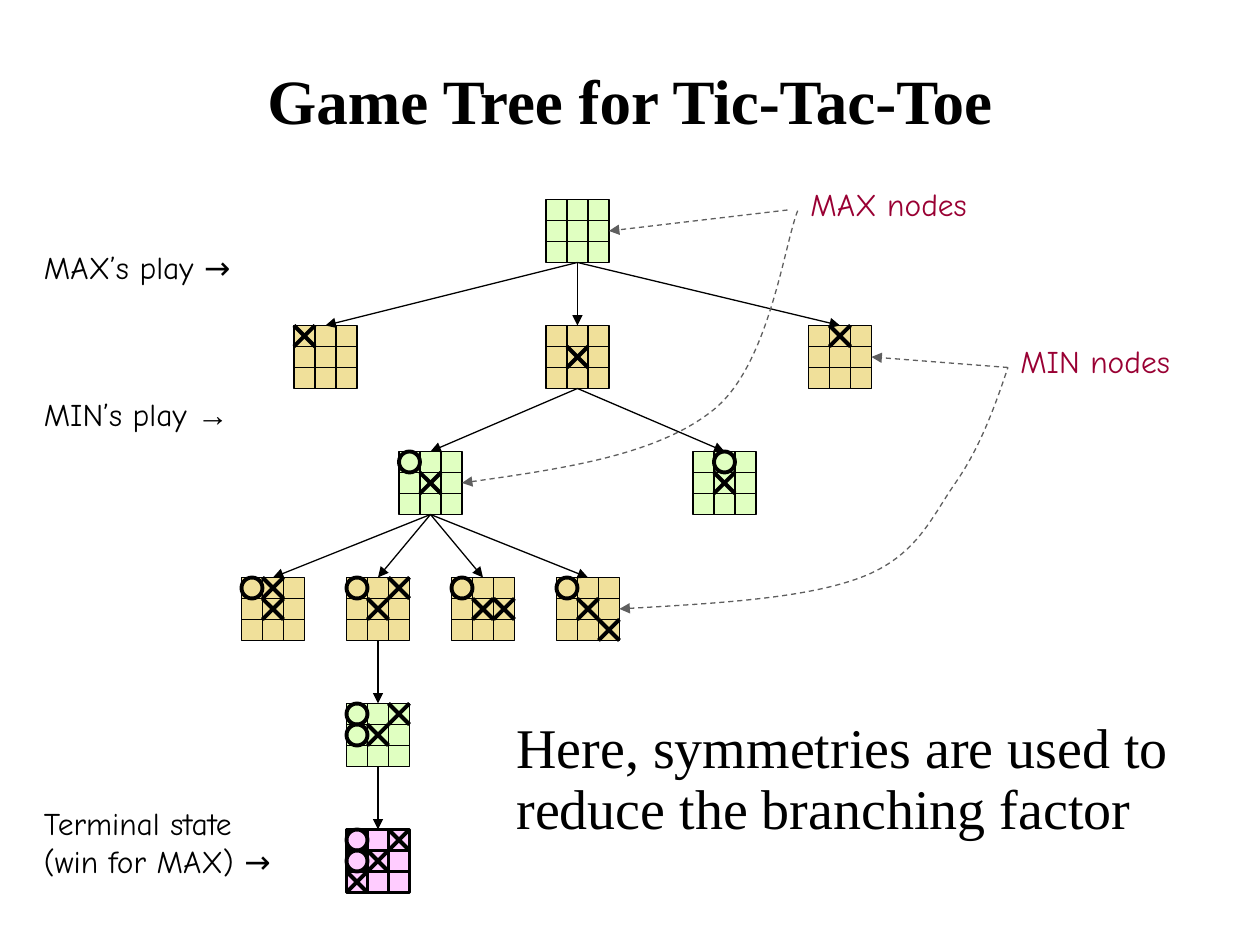
from lxml.etree import SubElement
from pptx import Presentation
from pptx.dml.color import RGBColor
from pptx.enum.dml import MSO_LINE
from pptx.enum.shapes import MSO_CONNECTOR, MSO_SHAPE
from pptx.enum.text import MSO_ANCHOR, MSO_AUTO_SIZE, PP_ALIGN
from pptx.oxml.ns import qn
from pptx.util import Inches, Pt

COLOURS = {
    "ink": "000000",
    "note": "990033",
    "pointer": "5F5F5F",
    "max": "E0FFC1",
    "min": "F0E09A",
    "terminal": "FFCCFF",
}
SLIDE_COLUMNS, SLIDE_ROWS = 120, 90
CELL = 2
BOARD = 3 * CELL
FIRST_ROW, LEVEL_ROWS = 19, 12
TOP, BOTTOM, RIGHT = 0, 2, 3

# name: (column, level, player, marks row by row)
BOARDS = {
    "root": (52, 0, "max", "... ... ..."),
    "corner": (28, 1, "min", "X.. ... ..."),
    "centre": (52, 1, "min", "... .X. ..."),
    "edge": (77, 1, "min", ".X. ... ..."),
    "corner reply": (38, 2, "max", "O.. .X. ..."),
    "edge reply": (66, 2, "max", ".O. .X. ..."),
    "top middle": (23, 3, "min", "OX. .X. ..."),
    "top right": (33, 3, "min", "O.X .X. ..."),
    "middle right": (43, 3, "min", "O.. .XX ..."),
    "bottom right": (53, 3, "min", "O.. .X. ..X"),
    "block": (33, 4, "max", "O.X OX. ..."),
    "win": (33, 5, "terminal", "O.X OX. X.."),
}
MOVES = {
    "root": ("corner", "centre", "edge"),
    "centre": ("corner reply", "edge reply"),
    "corner reply": ("top middle", "top right", "middle right", "bottom right"),
    "top right": ("block",),
    "block": ("win",),
}


def grid(*units):
    """Turn grid units into slide lengths."""
    return [Inches(unit / 12) for unit in units]


def colour(name):
    """Look up a named colour."""
    return RGBColor.from_string(COLOURS[name])


def format_line(shape, width=0.75, ink="ink", dashed=False, arrow=None):
    """Format an outline or connector and take its shadow away."""
    shape.line.color.rgb = colour(ink)
    shape.line.width = Pt(width)
    if dashed:
        shape.line.dash_style = MSO_LINE.DASH
    properties = shape._element.spPr
    if arrow:
        SubElement(properties.find(qn("a:ln")), qn(f"a:{arrow}"), type="triangle")
    if properties.find(qn("a:effectLst")) is None:
        SubElement(properties, qn("a:effectLst"))


def add_line(shapes, start, end, **line_format):
    """Add a straight connector between two grid points."""
    connector = shapes.add_connector(MSO_CONNECTOR.STRAIGHT, *grid(*start, *end))
    format_line(connector, **line_format)
    return connector


def add_filled(shapes, kind, box, fill, width):
    """Add an outlined preset shape."""
    shape = shapes.add_shape(kind, *grid(*box))
    shape.fill.solid()
    shape.fill.fore_color.rgb = colour(fill)
    format_line(shape, width)
    return shape


def write_text(frame, text, font="Comic Neue", size=18, ink="ink", bold=False,
               align=PP_ALIGN.LEFT, spacing=None, tail="", tail_font="Arial"):
    """Write one paragraph, with an optional tail in another font."""
    paragraph = frame.paragraphs[0]
    paragraph.text = text
    paragraph.alignment = align
    if spacing:
        paragraph.line_spacing = spacing
    if tail:
        paragraph.add_run().text = tail
    for run in paragraph.runs:
        run.font.name = tail_font if run.text == tail else font
        run.font.size = Pt(size)
        run.font.bold = bold
        run.font.color.rgb = colour(ink)


def add_text(slide, box, text, wrap=False, **text_format):
    """Add a text box on the grid."""
    frame = slide.shapes.add_textbox(*grid(*box)).text_frame
    frame.word_wrap = wrap
    frame.auto_size = MSO_AUTO_SIZE.SHAPE_TO_FIT_TEXT
    write_text(frame, text, **text_format)


def add_title(slide, box, text):
    """Place and write the slide title."""
    title = slide.shapes.title
    title.left, title.top, title.width, title.height = grid(*box)
    title.text_frame.vertical_anchor = MSO_ANCHOR.MIDDLE
    write_text(title.text_frame, text, font="Times New Roman", size=36, bold=True,
               align=PP_ALIGN.CENTER)


def add_board(slide, left, top, player, marks):
    """Draw one board with its marks and return its square."""
    shapes = slide.shapes.add_group_shape().shapes
    width = 1.5 if player == "terminal" else 0.75
    right, bottom = left + BOARD, top + BOARD
    square = add_filled(shapes, MSO_SHAPE.RECTANGLE, (left, top, BOARD, BOARD),
                        player, width)
    for offset in (CELL, 2 * CELL):
        add_line(shapes, (left, top + offset), (right, top + offset), width=width)
        add_line(shapes, (left + offset, top), (left + offset, bottom), width=width)
    for row, line in enumerate(marks.split()):
        for column, mark in enumerate(line):
            x, y = left + column * CELL, top + row * CELL
            if mark == "O":
                add_filled(shapes, MSO_SHAPE.OVAL, (x, y, CELL, CELL), player, 2.25)
            elif mark == "X":
                add_line(shapes, (x, y), (x + CELL, y + CELL), width=2.25)
                add_line(shapes, (x, y + CELL), (x + CELL, y), width=2.25)
    return square


def add_tree(slide):
    """Draw all boards and the moves that join them."""
    squares = {
        name: add_board(slide, column, FIRST_ROW + level * LEVEL_ROWS, player, marks)
        for name, (column, level, player, marks) in BOARDS.items()
    }
    for parent, children in MOVES.items():
        for child in children:
            move = add_line(slide.shapes, (0, 0), (1, 1), arrow="tailEnd")
            move.begin_connect(squares[parent], BOTTOM)
            move.end_connect(squares[child], TOP)
    return squares


def add_curve(slide, points):
    """Draw a dashed Bezier curve with an arrowhead at its start."""
    start, *others = [grid(*point) for point in points]
    builder = slide.shapes.build_freeform(*start)
    builder.add_line_segments(others, close=False)
    curve = builder.convert_to_shape()
    curve.fill.background()
    format_line(curve, ink="pointer", dashed=True, arrow="headEnd")
    segments = list(curve._element.iter(qn("a:lnTo")))
    outline = segments[0].getparent()
    for first in range(0, len(segments), 3):
        bezier = SubElement(outline, qn("a:cubicBezTo"))
        for segment in segments[first:first + 3]:
            bezier.append(segment[0])
            outline.remove(segment)


def add_note(slide, box, text, start, square, curve):
    """Name a kind of node and point at two examples."""
    add_text(slide, box, text, ink="note")
    add_curve(slide, curve)
    pointer = add_line(slide.shapes, start, (0, 0), ink="pointer", dashed=True,
                       arrow="tailEnd")
    pointer.end_connect(square, RIGHT)


def main():
    """Build the game tree slide."""
    presentation = Presentation()
    presentation.slide_width, presentation.slide_height = grid(SLIDE_COLUMNS, SLIDE_ROWS)
    slide = presentation.slides.add_slide(presentation.slide_layouts[5])
    add_title(slide, (6, 2, 108, 15), "Game Tree for Tic-Tac-Toe")
    squares = add_tree(slide)
    add_text(slide, (3, 23, 21.7, 4.8), "MAX’s play →")
    add_text(slide, (3, 37, 21.4, 4.8), "MIN’s play ", tail="→")
    add_text(slide, (3, 76, 26.3, 8.4), "Terminal state\n(win for MAX) →")
    add_text(slide, (48, 68, 66, 13),
             "Here, symmetries are used to reduce the branching factor",
             wrap=True, font="Times New Roman", size=32, spacing=0.9)
    add_note(slide, (96, 32, 18, 4.8), "MIN nodes", (96, 35), squares["edge"],
             [(59, 58), (67.8, 57.5), (76.7, 57), (82, 55), (87.3, 53),
              (88.7, 49.3), (91, 46), (93.3, 42.7), (94.7, 38.9), (96, 35)])
    add_note(slide, (76, 17, 18.4, 4.8), "MAX nodes", (75, 20), squares["root"],
             [(44, 46), (53.3, 44.7), (62.7, 43.3), (68, 39),
              (73.3, 34.7), (74.7, 23.2), (76, 20)])
    presentation.save("out.pptx")


if __name__ == "__main__":
    main()
